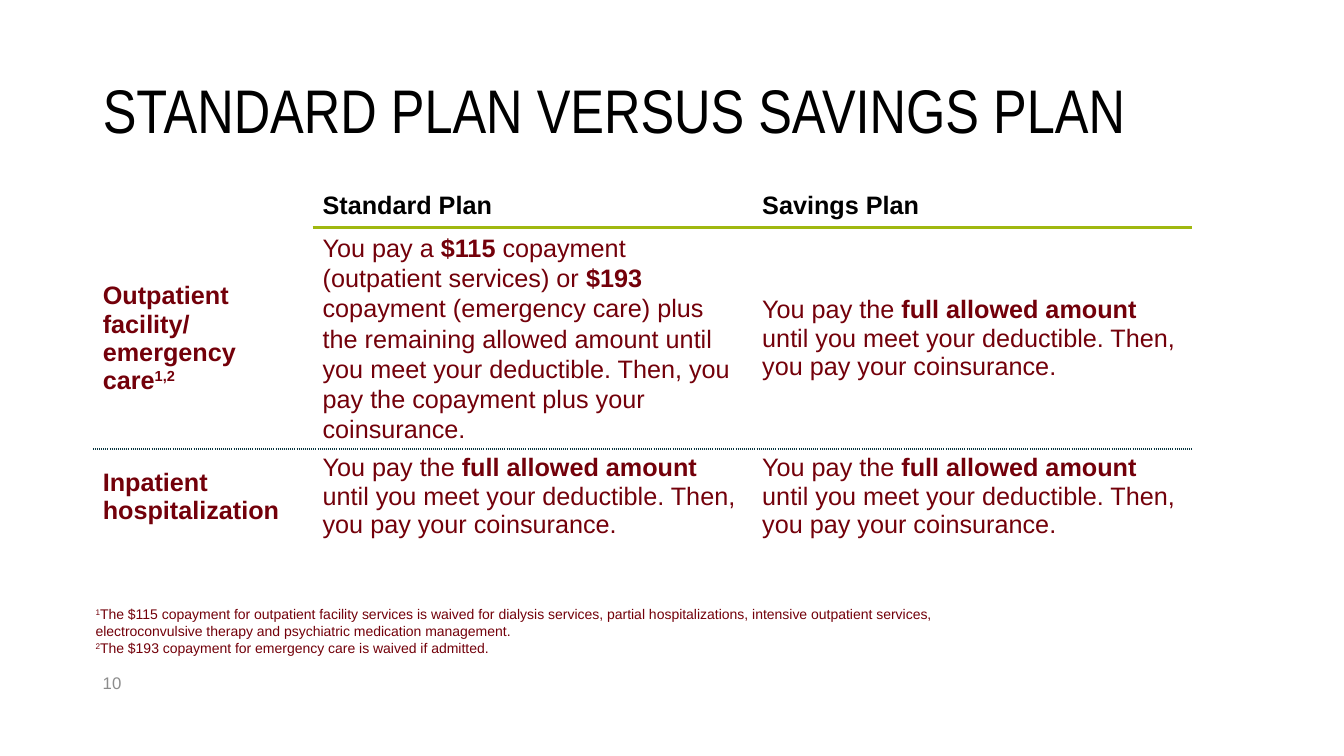
from dataclasses import dataclass
from lxml.etree import SubElement
from pptx import Presentation
from pptx.dml.color import RGBColor as RGB
from pptx.enum.text import MSO_ANCHOR as ANCHOR, PP_ALIGN as ALIGN
from pptx.oxml.ns import qn
from pptx.util import Inches, Pt

TITLE = "STANDARD PLAN VERSUS SAVINGS PLAN"
PAGE = "10"
FULL_AMOUNT = [
    ("You pay the ", ""),
    ("full allowed amount ", "bold"),
    ("until you meet your deductible. Then, you pay your coinsurance.", ""),
]
COPAYMENT = [
    ("You pay a ", ""),
    ("$115", "bold"),
    (" copayment (outpatient services) or ", ""),
    ("$193", "bold"),
    (" copayment (emergency care) plus the remaining allowed amount until you meet "
     "your deductible. Then, you pay the copayment plus your coinsurance.", ""),
]
ROWS = [
    [[], [("Standard Plan", "bold")], [("Savings Plan", "bold")]],
    [[("Outpatient facility/\vemergency care", "bold"), ("1,2", "bold super")],
     COPAYMENT, FULL_AMOUNT],
    [[("Inpatient hospitalization", "bold")], FULL_AMOUNT, FULL_AMOUNT],
]
FOOTNOTES = [
    [("1", "super"),
     ("The $115 copayment for outpatient facility services is waived for dialysis services, "
      "partial hospitalizations, intensive outpatient services, electroconvulsive therapy "
      "and psychiatric medication management.", "")],
    [("2", "super"), ("The $193 copayment for emergency care is waived if admitted.", "")],
]
COL_WIDTHS = [2.18, 4.36, 4.36]
ROW_HEIGHTS = [0.41, 2.19, 0.93]
NO_STYLE = "{2D5ABB26-0587-4C30-8999-92F81FD0307C}"


@dataclass(frozen=True)
class Theme:
    title_font: str = "Arial Narrow"
    font: str = "Arial"
    black: str = "000000"
    garnet: str = "73000A"
    gray: str = "8C8C8C"
    green: str = "A0B810"
    teal: str = "0D3841"
    title_size: int = 44
    table_size: int = 18
    page_size: int = 12
    note_size: int = 10


T = Theme()


def style_font(font, name, size, color):
    font.name, font.size = name, Pt(size)
    font.color.rgb = RGB.from_string(color)


def write(p, parts, size, color):
    for text, style in parts:
        for i, line in enumerate(text.split("\v")):
            if i:
                p.add_line_break()
            r = p.add_run()
            r.text = line
            style_font(r.font, T.font, size, color)
            r.font.bold = "bold" in style
            if "super" in style:
                r.font._element.set("baseline", "30000")


def add_border(cell, side, color, width, dash):
    ln = SubElement(cell._tc.get_or_add_tcPr(), qn(f"a:ln{side}"), w=str(Pt(width)))
    fill = SubElement(ln, qn("a:solidFill"))
    SubElement(fill, qn("a:srgbClr"), val=color)
    SubElement(ln, qn("a:prstDash"), val=dash)


def add_text_box(slide, left, top, width, height):
    box = slide.shapes.add_textbox(Inches(left), Inches(top), Inches(width), Inches(height))
    box.text_frame.word_wrap = True
    return box.text_frame


def add_title(slide):
    title = slide.shapes.title
    title.left, title.top = Inches(0.92), Inches(0.4)
    title.width, title.height = Inches(11.5), Inches(1.45)
    tf = title.text_frame
    tf.text = TITLE
    tf.vertical_anchor = ANCHOR.MIDDLE
    p = tf.paragraphs[0]
    p.alignment, p.line_spacing = ALIGN.LEFT, 0.9
    style_font(p.runs[0].font, T.title_font, T.title_size, T.black)


def add_plan_table(slide):
    frame = slide.shapes.add_table(
        len(ROWS), len(COL_WIDTHS), Inches(0.92), Inches(1.85),
        Inches(sum(COL_WIDTHS)), Inches(sum(ROW_HEIGHTS)))
    table = frame.table
    table.first_row = table.horz_banding = False
    table._tbl.tblPr.find(qn("a:tableStyleId")).text = NO_STYLE
    for col, width in zip(table.columns, COL_WIDTHS):
        col.width = Inches(width)
    for row, height in zip(table.rows, ROW_HEIGHTS):
        row.height = Inches(height)
    header_rule = (T.green, 2.25, "solid")
    row_rule = (T.teal, 1.5, "sysDot")
    for i, row in enumerate(ROWS):
        for j, parts in enumerate(row):
            cell = table.cell(i, j)
            if i == 1 and j:
                add_border(cell, "T", *header_rule)
            if i == 2:
                add_border(cell, "T", *row_rule)
            if i == 0 and j:
                add_border(cell, "B", *header_rule)
            if i == 1:
                add_border(cell, "B", *row_rule)
            cell.fill.background()
            cell.vertical_anchor = ANCHOR.MIDDLE if i else ANCHOR.TOP
            p = cell.text_frame.paragraphs[0]
            if parts is COPAYMENT:
                p.line_spacing = 1.07
            write(p, parts, T.table_size, T.garnet if i else T.black)


def add_footer(slide):
    tf = add_text_box(slide, 0.85, 5.96, 9, 0.61)
    for i, parts in enumerate(FOOTNOTES):
        p = tf.add_paragraph() if i else tf.paragraphs[0]
        write(p, parts, T.note_size, T.garnet)
    tf = add_text_box(slide, 0.92, 6.57, 2.88, 0.4)
    tf.vertical_anchor = ANCHOR.MIDDLE
    write(tf.paragraphs[0], [(PAGE, "")], T.page_size, T.gray)


def main():
    prs = Presentation()
    prs.slide_width, prs.slide_height = Inches(13.33), Inches(7.5)
    slide = prs.slides.add_slide(prs.slide_layouts[5])
    add_title(slide)
    add_plan_table(slide)
    add_footer(slide)
    prs.save("out.pptx")


if __name__ == "__main__":
    main()
